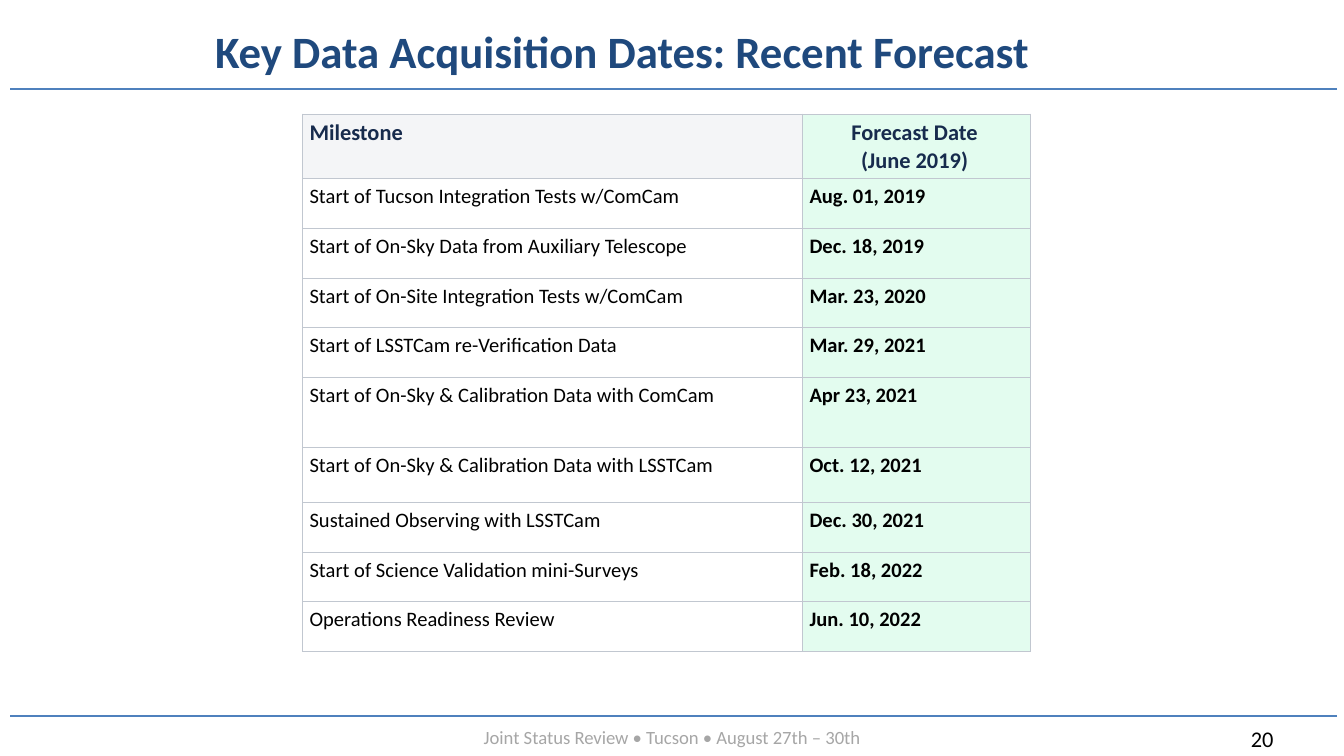
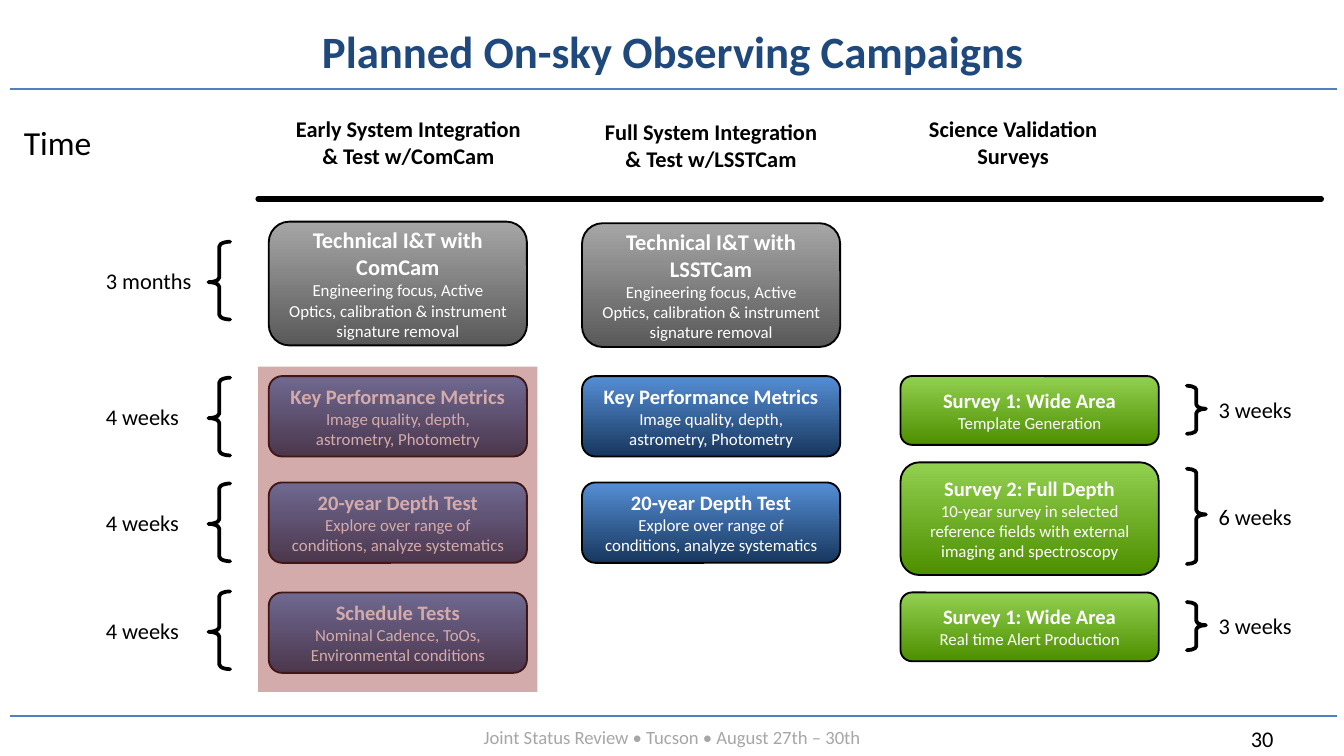
"""Build two slides: forecast milestone dates and the planned observing campaigns."""
from lxml.etree import SubElement
from pptx import Presentation
from pptx.dml.color import RGBColor
from pptx.enum.shapes import MSO_CONNECTOR as Connector, MSO_SHAPE as Shape
from pptx.enum.text import MSO_ANCHOR as Anchor, MSO_AUTO_SIZE as AutoSize, PP_ALIGN as Align
from pptx.oxml.ns import qn
from pptx.util import Cm, Pt

FONT = "Calibri"
FOOTER = "Joint Status Review • Tucson • August 27th – 30th"
COLORS = {
    "title": "1F497D", "rule": "4F81BD", "footer": "A6A6A6", "black": "000000",
    "white": "FFFFFF", "border": "C1C7D0", "heading": "172B4D",
    "heading_fill": "F4F5F7", "date_fill": "E3FCEF", "overlay": "953735",
}
GRADIENTS = {
    "technical": ("A6A6A6", "595959"),
    "test": ("558ED5", "17375E"),
    "survey": ("92D050", "4E8F00"),
}

TABLE_HEAD = ("Milestone", "Forecast Date\n(June 2019)")
MILESTONES = [
    ("Start of Tucson Integration Tests w/ComCam", "Aug. 01, 2019"),
    ("Start of On-Sky Data from Auxiliary Telescope", "Dec. 18, 2019"),
    ("Start of On-Site Integration Tests w/ComCam", "Mar. 23, 2020"),
    ("Start of LSSTCam re-Verification Data", "Mar. 29, 2021"),
    ("Start of On-Sky & Calibration Data with ComCam", "Apr 23, 2021"),
    ("Start of On-Sky & Calibration Data with LSSTCam", "Oct. 12, 2021"),
    ("Sustained Observing with LSSTCam", "Dec. 30, 2021"),
    ("Start of Science Validation mini-Surveys", "Feb. 18, 2022"),
    ("Operations Readiness Review", "Jun. 10, 2022"),
]
COLUMN_WIDTHS = (9.45, 4.3)
ROW_HEIGHT = 0.94
TALL_ROWS = {5: 1.32, 6: 1.04}

ENGINEERING = "Engineering focus, Active Optics, calibration & instrument signature removal"
METRICS = ("test", 7.11, 1.52, "Key Performance Metrics",
           "Image quality, depth, astrometry, Photometry")
DEPTH = ("test", 9.12, 1.52, "20-year Depth Test",
         "Explore over range of conditions, analyze systematics")
CAMPAIGNS = [
    {"heading": ("Early System Integration & Test w/ComCam", 5.28, 2.06), "left": 5.08, "steps": [
        ("technical", 4.19, 2.34, "Technical I&T with ComCam", ENGINEERING),
        METRICS,
        DEPTH,
        ("test", 11.2, 1.52, "Schedule Tests", "Nominal Cadence, ToOs, Environmental conditions"),
    ]},
    {"heading": ("Full System Integration & Test w/LSSTCam", 11, 2.11), "left": 11, "steps": [
        ("technical", 4.22, 2.34, "Technical I&T with LSSTCam", ENGINEERING),
        METRICS,
        DEPTH,
    ]},
    {"heading": ("Science Validation Surveys", 16.71, 2.06), "left": 17.02, "steps": [
        ("survey", 7.11, 1.3, "Survey 1: Wide Area", "Template Generation"),
        ("survey", 8.74, 2.13, "Survey 2: Full Depth",
         "10-year survey in selected reference fields with external imaging and spectroscopy"),
        ("survey", 11.2, 1.3, "Survey 1: Wide Area", "Real time Alert Production"),
    ]},
]
CAMPAIGN_WIDTH = 4.88
DURATIONS = [
    {"brace": 3.94, "width": 0.41, "label": 1.75, "turn": 0, "spans": [
        ("3 months", 4.57, 1.47), ("4 weeks", 7.14, 1.47),
        ("4 weeks", 9.14, 1.47), ("4 weeks", 11.18, 1.47)]},
    {"brace": 22.43, "width": 0.36, "label": 22.78, "turn": 180, "spans": [
        ("3 weeks", 7.29, 0.91), ("6 weeks", 8.86, 1.8), ("3 weeks", 11.38, 0.91)]},
]
LABEL_HEIGHT = 0.76


def rgb(name):
    return RGBColor.from_string(COLORS[name])


def style(paragraph, size, color, bold=False, align=Align.LEFT):
    paragraph.alignment = align
    for run in paragraph.runs:
        run.font.name = FONT
        run.font.size = Pt(size)
        run.font.bold = bold
        run.font.color.rgb = rgb(color)


def add_label(slide, text, box, size, color="black", bold=False, align=Align.LEFT, wrap=True):
    frame = slide.shapes.add_textbox(*map(Cm, box)).text_frame
    frame.text = text
    frame.word_wrap = wrap
    frame.auto_size = AutoSize.SHAPE_TO_FIT_TEXT
    style(frame.paragraphs[0], size, color, bold, align)


def add_rule(slide, start, end, y, color, weight):
    rule = slide.shapes.add_connector(Connector.STRAIGHT, Cm(start), Cm(y), Cm(end), Cm(y))
    rule.line.color.rgb = rgb(color)
    rule.line.width = Pt(weight)
    SubElement(rule.element.spPr, qn("a:effectLst"))
    return rule


def add_page(deck, title, left, width, number, align):
    slide = deck.slides.add_slide(deck.slide_layouts[5])
    for y in (13.54, 1.68):
        add_rule(slide, 25.27, 0.18, y, "rule", 1)
    add_label(slide, number, (23.39, 13.59, 1.57, 0.76), 12)
    add_label(slide, FOOTER, (1.27, 13.59, 22.86, 0.69), 10, "footer", align=Align.CENTER)
    heading = slide.shapes.title
    heading.left, heading.top, heading.width, heading.height = map(Cm, (left, 0.38, width, 1.17))
    frame = heading.text_frame
    frame.text = title
    frame.auto_size = AutoSize.NONE
    frame.vertical_anchor = Anchor.MIDDLE
    style(frame.paragraphs[0], 24, "title", True, align)
    return slide


def outline_cell(cell):
    properties = cell._tc.get_or_add_tcPr()
    for side in ("lnL", "lnR", "lnT", "lnB"):
        edge = SubElement(properties, qn(f"a:{side}"), w=str(Pt(0.75)))
        SubElement(SubElement(edge, qn("a:solidFill")), qn("a:srgbClr"), val=COLORS["border"])


def add_milestones(slide):
    rows = [TABLE_HEAD, *MILESTONES]
    heights = [TALL_ROWS.get(index, ROW_HEIGHT) for index in range(len(rows))]
    table = slide.shapes.add_table(len(rows), 2, Cm(5.72), Cm(2.16),
                                   Cm(sum(COLUMN_WIDTHS)), Cm(sum(heights))).table
    table.first_row = table.horz_banding = False
    for column, width in zip(table.columns, COLUMN_WIDTHS):
        column.width = Cm(width)
    for index, (texts, height) in enumerate(zip(rows, heights)):
        table.rows[index].height = Cm(height)
        is_head = index == 0
        for position, text in enumerate(texts):
            is_date = position == 1
            cell = table.cell(index, position)
            cell.text = text
            cell.margin_left = Cm(0.13)
            cell.margin_right = Cm(0.2 if is_head else 0.13)
            cell.margin_top = cell.margin_bottom = Cm(0.1)
            outline_cell(cell)
            cell.fill.solid()
            plain_fill = "heading_fill" if is_head else "white"
            cell.fill.fore_color.rgb = rgb("date_fill" if is_date else plain_fill)
            for paragraph in cell.text_frame.paragraphs:
                style(paragraph, 12 if is_head else 11, "heading" if is_head else "black",
                      is_head or is_date, Align.CENTER if is_head and is_date else Align.LEFT)


def add_step(slide, left, kind, top, height, name, detail):
    step = slide.shapes.add_shape(Shape.ROUNDED_RECTANGLE,
                                  *map(Cm, (left, top, CAMPAIGN_WIDTH, height)))
    step.shadow.inherit = False
    step.fill.gradient()
    step.fill.gradient_angle = 270
    for stop, color in zip(step.fill.gradient_stops, GRADIENTS[kind]):
        stop.color.rgb = RGBColor.from_string(color)
    step.line.color.rgb = rgb("black")
    step.line.width = Pt(1)
    frame = step.text_frame
    frame.text = f"{name}\n{detail}"
    frame.word_wrap = True
    frame.vertical_anchor = Anchor.MIDDLE
    style(frame.paragraphs[0], 12 if kind == "technical" else 11, "white", True, Align.CENTER)
    style(frame.paragraphs[1], 9, "white", align=Align.CENTER)


def add_durations(slide, side):
    for text, top, height in side["spans"]:
        brace = slide.shapes.add_shape(Shape.LEFT_BRACE,
                                       *map(Cm, (side["brace"], top, side["width"], height)))
        brace.shadow.inherit = False
        brace.rotation = side["turn"]
        brace.adjustments[0], brace.adjustments[1] = 0.22, 0.52
        brace.fill.background()
        brace.line.color.rgb = rgb("black")
        brace.line.width = Pt(2)
        brace.element.spPr.find(qn("a:ln")).set("cap", "rnd")
        label_top = top + (height - LABEL_HEIGHT) / 2
        label_width = 2.16 if "months" in text else 1.93
        add_label(slide, text, (side["label"], label_top, label_width, LABEL_HEIGHT), 12, wrap=False)


def add_overlay(slide):
    overlay = slide.shapes.add_shape(Shape.RECTANGLE, Cm(4.88), Cm(6.93), Cm(5.28), Cm(6.15))
    overlay.shadow.inherit = False
    overlay.line.fill.background()
    overlay.fill.solid()
    overlay.fill.fore_color.rgb = rgb("overlay")
    tint = overlay.element.spPr.find(qn("a:solidFill")).find(qn("a:srgbClr"))
    SubElement(tint, qn("a:alpha"), val="42000")


def add_campaigns(slide):
    add_label(slide, "Time", (0.2, 2.18, 1.8, 1.02), 18, wrap=False)
    timeline = add_rule(slide, 4.88, 24.97, 3.76, "black", 3)
    timeline.element.spPr.find(qn("a:ln")).set("cap", "rnd")
    for campaign in CAMPAIGNS:
        text, left, top = campaign["heading"]
        add_label(slide, text, (left, top, CAMPAIGN_WIDTH, 1.27), 12, bold=True, align=Align.CENTER)
        for step in campaign["steps"]:
            add_step(slide, campaign["left"], *step)
    for side in DURATIONS:
        add_durations(slide, side)
    add_overlay(slide)


def main():
    deck = Presentation()
    deck.slide_width, deck.slide_height = Cm(25.4), Cm(14.29)
    add_milestones(add_page(deck, "Key Data Acquisition Dates: Recent Forecast",
                            3.81, 16.71, "20", Align.LEFT))
    add_campaigns(add_page(deck, "Planned On-sky Observing Campaigns",
                           4.88, 15.67, "30", Align.CENTER))
    deck.save("out.pptx")


if __name__ == "__main__":
    main()
